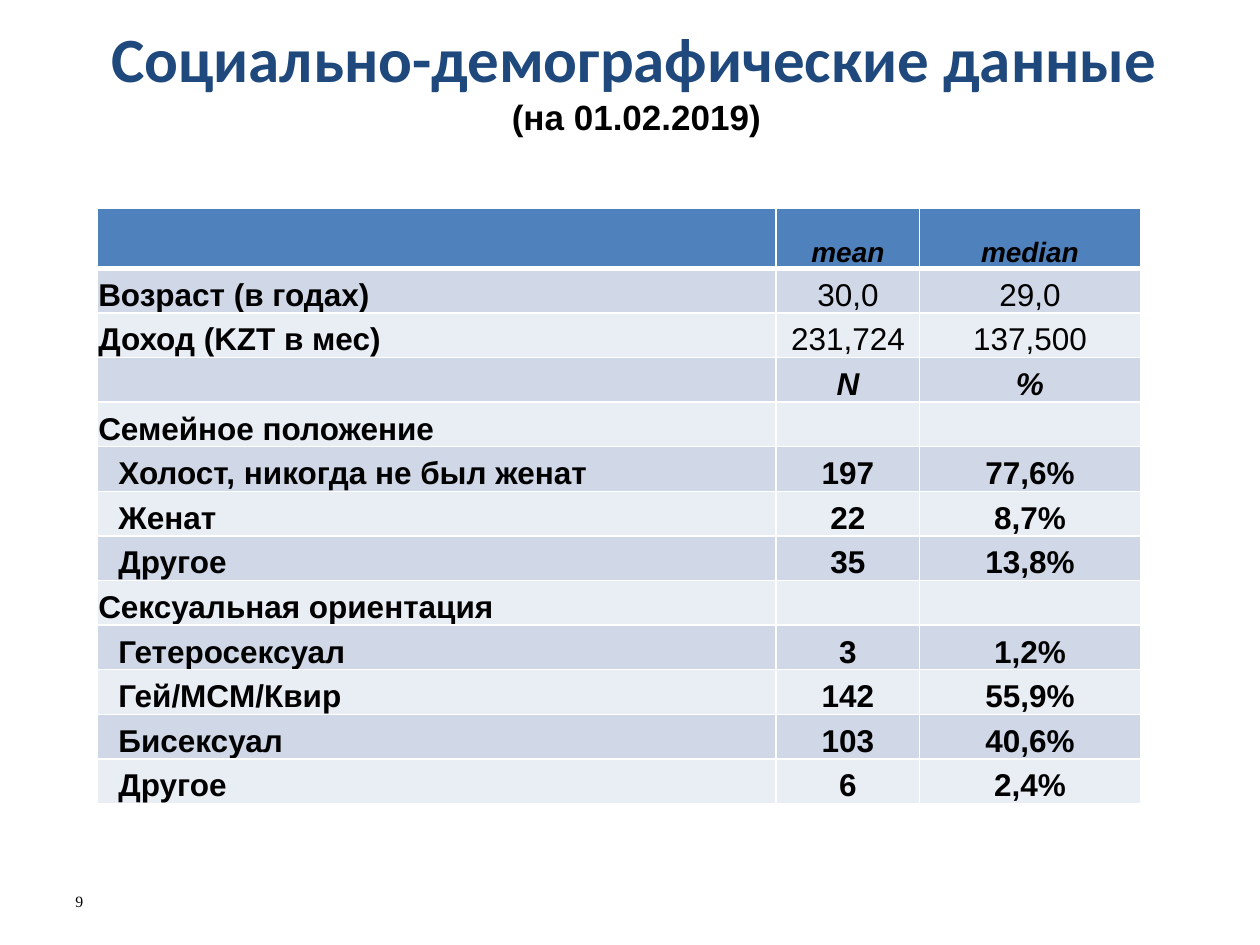
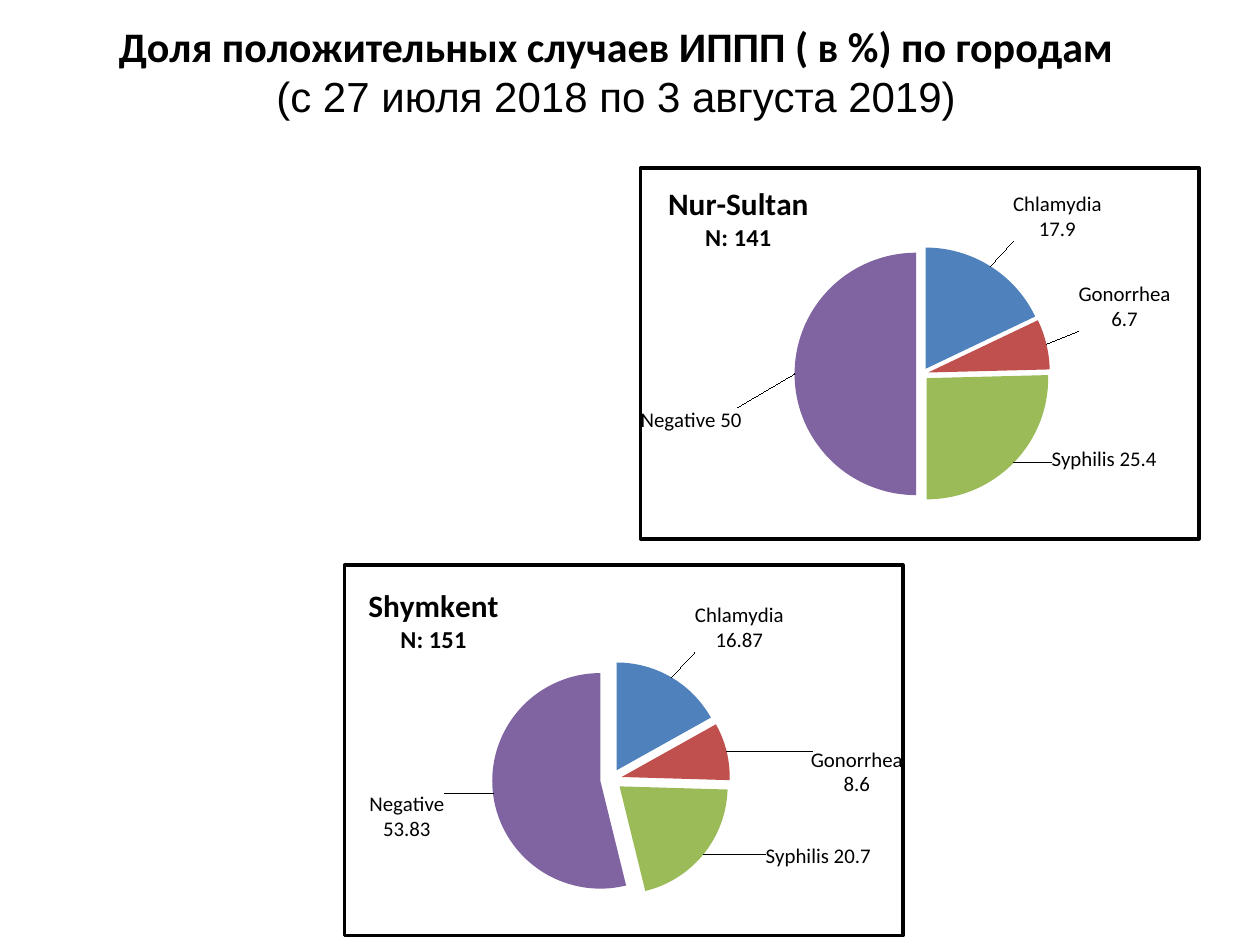
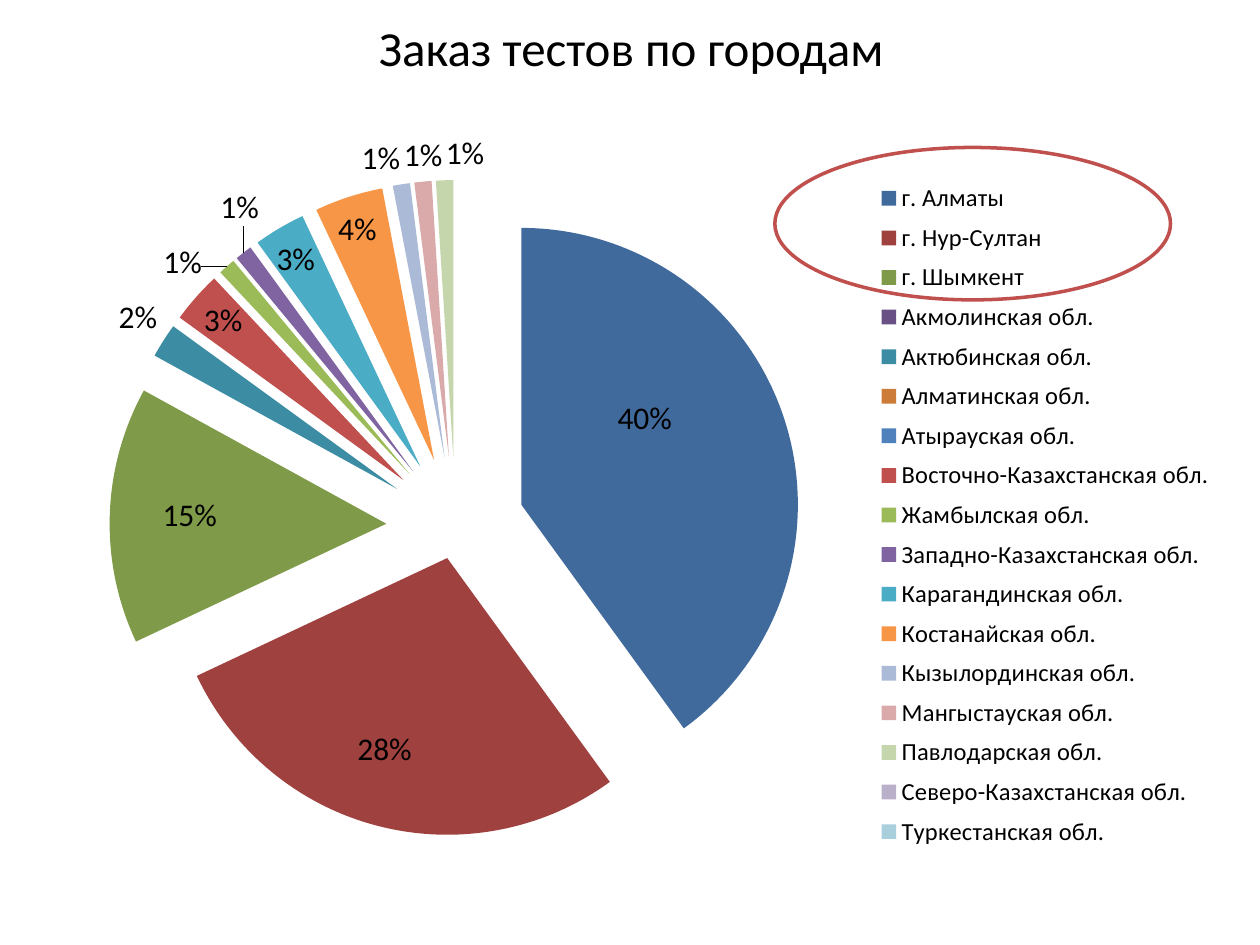
from pptx import Presentation
from pptx.chart.data import CategoryChartData
from pptx.dml.color import RGBColor
from pptx.enum import chart as ch, shapes, text
from pptx.oxml import parse_xml
from pptx.oxml.ns import nsdecls, qn
from pptx.util import Inches, Pt

# Shared look
COLORS = {"black": "000000", "white": "FFFFFF", "navy": "1F497D", "header": "4F81BD",
          "band_dark": "D0D8E8", "band_light": "E9EDF4", "red": "C0504D"}
ACCENTS = ["4F81BD", "C0504D", "9BBB59", "8064A2", "4BACC6", "F79646"]
DARK_ACCENTS = ["416A9C", "9F413E", "7F9A48", "695185", "3C8DA3", "CC7B38"]
LIGHT_ACCENTS = ["AABAD7", "D9AAA9", "C6D6AC", "BAB0C9", "A9CFDD"]
CENTER, LEFT = text.PP_ALIGN.CENTER, text.PP_ALIGN.LEFT

# Slide 1: (kind, label, first value, second value)
DEMOGRAPHY = [
    ("header", "", "mean", "median"),
    ("plain", "Возраст (в годах)", "30,0", "29,0"),
    ("plain", "Доход (KZT в мес)", "231,724", "137,500"),
    ("units", "", "N", "%"),
    ("group", "Семейное положение", "", ""),
    ("item", "Холост, никогда не был женат", "197", "77,6%"),
    ("item", "Женат", "22", "8,7%"),
    ("item", "Другое", "35", "13,8%"),
    ("group", "Сексуальная ориентация", "", ""),
    ("item", "Гетеросексуал", "3", "1,2%"),
    ("item", "Гей/MСM/Квир", "142", "55,9%"),
    ("item", "Бисексуал", "103", "40,6%"),
    ("item", "Другое", "6", "2,4%"),
]
TABLE_AT = (0.77, 1.65, 8.28, 4.73)
COLUMN_WIDTHS = [5.39, 1.14, 1.75]
HEADER_HEIGHT = 0.48

# Slide 2: places inside a chart and label shifts are in inches
INFECTIONS = ["Chlamydia", "Gonorrhea", "Syphilis", "Negative"]
CITIES = [
    {"name": "Nur-Sultan", "count": "N: 141", "at": (5.07, 1.32), "explosion": 5,
     "values": [17.9, 6.7, 25.4, 50], "plot": (1.23, 0.63, 2.04, 2.04),
     "title_at": (0.19, 0.09),
     "shifts": [(0.15, -0.15), (0.2, -0.09), (0.26, -0.17), (-0.4, 0.37)]},
    {"name": "Shymkent", "count": "N: 151", "at": (2.72, 4.47), "explosion": 10,
     "values": [16.87, 8.6, 20.7, 53.83], "plot": (1.18, 0.77, 1.9, 1.9),
     "title_at": (0.16, 0.13),
     "shifts": [(0.16, -0.15), (0.63, 0.38), (0.45, -0.12), (-0.33, -0.02)]},
]
CITY_SIZE = (4.46, 2.97)

# Slide 3: share of test orders
ORDERS = [
    ("г. Алматы", 40), ("г. Нур-Султан", 28), ("г. Шымкент", 15),
    ("Акмолинская обл.", 0), ("Актюбинская обл.", 2), ("Алматинская обл.", 0),
    ("Атырауская обл.", 0), ("Восточно-Казахстанская обл.", 3),
    ("Жамбылская обл.", 1), ("Западно-Казахстанская обл.", 1),
    ("Карагандинская обл.", 3), ("Костанайская обл.", 4), ("Кызылординская обл.", 1),
    ("Мангыстауская обл.", 1), ("Павлодарская обл.", 1),
    ("Северо-Казахстанская обл.", 0), ("Туркестанская обл.", 0),
]
ORDER_SHIFTS = [(-1.38, 0.16), (0.28, -0.82), (0.91, 0)]
UNLABELLED = ["Акмолинская обл.", "Атырауская обл.", "Северо-Казахстанская обл.",
              "Туркестанская обл."]
ORDERS_AT = (0.24, 0.9, 9.5, 6.34)


def rgb(name):
    return RGBColor.from_string(COLORS.get(name, name))


def inches(values):
    return [Inches(value) for value in values]


def add_span(para, words, size, font="Calibri", color="black", bold=False, italic=False):
    span = para.add_run()
    span.text = words
    span.font.size, span.font.name = Pt(size), font
    span.font.bold, span.font.italic = bold, italic
    span.font.color.rgb = rgb(color)


def add_text(page, at, lines, align=CENTER):
    """Each line is a dict of add_span arguments; lines share one paragraph."""
    frame = page.shapes.add_textbox(*inches(at)).text_frame
    frame.word_wrap = True
    frame.vertical_anchor = text.MSO_ANCHOR.MIDDLE
    para = frame.paragraphs[0]
    para.alignment = align
    for number, line in enumerate(lines):
        if number:
            para.add_line_break()
        add_span(para, **line)


# Table parts
def set_borders(cell, top, bottom):
    props = cell._tc.get_or_add_tcPr()
    widths = {"lnL": 1, "lnR": 1, "lnT": top, "lnB": bottom}
    for position, (side, width) in enumerate(widths.items()):
        props.insert(position, parse_xml(
            f'<a:{side} {nsdecls("a")} w="{Pt(width)}"><a:solidFill>'
            f'<a:srgbClr val="{COLORS["white"]}"/></a:solidFill></a:{side}>'))


def fill_cell(cell, words, kind, row, column):
    band = "header" if row == 0 else "band_dark" if row % 2 else "band_light"
    cell.fill.solid()
    cell.fill.fore_color.rgb = rgb(band)
    set_borders(cell, 3 if row == 1 else 1, 3 if row == 0 else 1)
    cell.vertical_anchor = text.MSO_ANCHOR.BOTTOM
    indent = 0.17 if kind == "item" and column == 0 else 0.01
    cell.margin_left, cell.margin_top = Inches(indent), Inches(0.01)
    cell.margin_right, cell.margin_bottom = Inches(0.01), 0
    para = cell.text_frame.paragraphs[0]
    para.alignment = CENTER if column else LEFT
    size = 16 if kind == "header" else 18
    if words:
        add_span(para, words, size, "Arial", bold=column == 0 or kind != "plain",
                 italic=kind in ("header", "units"))
    else:
        para.font.size = Pt(size)


# Chart parts
def layout_xml(at, chart_size, edge=True, inner=False):
    """Turn inches inside a chart into the fractions a chart layout needs."""
    modes = '<c:layoutTarget val="inner"/>' if inner else ""
    if edge:
        modes += '<c:xMode val="edge"/><c:yMode val="edge"/>'
    places = "".join(f'<c:{tag} val="{value / whole:.4f}"/>'
                     for tag, value, whole in zip("xywh", at, chart_size * 2))
    return f'<c:layout {nsdecls("c")}><c:manualLayout>{modes}{places}</c:manualLayout></c:layout>'


def set_layout(parent, after, layout):
    """Replace the layout of a chart part, right behind the child named after."""
    for old in parent.findall(qn("c:layout")):
        parent.remove(old)
    node = parse_xml(layout)
    if after is None:
        parent.insert(0, node)
    else:
        parent.find(qn(after)).addnext(node)


def labels_xml(shows, position, shifts, chart_size):
    """shifts maps a slice number to its label shift, or to None for no label."""
    flags = "".join(f'<c:show{flag} val="{int(flag in shows)}"/>' for flag in
                    ("LegendKey", "Val", "CatName", "SerName", "Percent", "BubbleSize"))
    flags = f'<c:dLblPos val="{position}"/>{flags}<c:separator> </c:separator>'
    special = ""
    for number, shift in sorted(shifts.items()):
        body = (layout_xml(shift, chart_size, edge=False) + flags if shift
                else '<c:delete val="1"/>')
        special += f'<c:dLbl><c:idx val="{number}"/>{body}</c:dLbl>'
    return (f'<c:dLbls {nsdecls("c")}>{special}{flags}'
            '<c:showLeaderLines val="1"/></c:dLbls>')


def explosion_node(percent):
    return parse_xml(f'<c:explosion {nsdecls("c")} val="{percent}"/>')


def add_pie(page, at, names, values, colors, size, explosion, plot, labels):
    data = CategoryChartData()
    data.categories = names
    data.add_series("Series 1", values)
    chart = page.shapes.add_chart(ch.XL_CHART_TYPE.PIE, *inches(at), data).chart
    chart.font.size, chart.font.name = Pt(size), "Calibri"
    chart.font.color.rgb = rgb("black")
    chart.has_title = chart.has_legend = False
    chart.plots[0].vary_by_categories = True
    series = chart.plots[0].series[0]
    for number, color in enumerate(colors):
        fill = series.points[number].format.fill
        fill.solid()
        fill.fore_color.rgb = rgb(color)
    node = series._element
    node.find(qn("c:tx")).addnext(explosion_node(explosion))
    node.find(qn("c:cat")).addprevious(parse_xml(labels))
    set_layout(chart._chartSpace.chart.plotArea, None, layout_xml(plot, at[2:], inner=True))
    return chart


def frame_chart(chart):
    chart._chartSpace.chart.addnext(parse_xml(
        f'<c:spPr {nsdecls("c", "a")}><a:solidFill><a:srgbClr val="{COLORS["white"]}"/>'
        f'</a:solidFill><a:ln w="{Pt(2)}"><a:solidFill><a:srgbClr val="{COLORS["black"]}"/>'
        '</a:solidFill></a:ln></c:spPr>'))


# Slides
def demography_slide(page):
    add_text(page, (0.59, 0, 9, 1.25), [
        {"words": "Социально-демографические данные ", "size": 36, "color": "navy", "bold": True},
        {"words": "(на 01.02.2019) ", "size": 20, "font": "Arial", "bold": True}])
    table = page.shapes.add_table(
        len(DEMOGRAPHY), len(COLUMN_WIDTHS), *inches(TABLE_AT)).table
    for column, width in enumerate(COLUMN_WIDTHS):
        table.columns[column].width = Inches(width)
    row_height = (TABLE_AT[3] - HEADER_HEIGHT) / (len(DEMOGRAPHY) - 1)
    for row, (kind, *cells) in enumerate(DEMOGRAPHY):
        table.rows[row].height = Inches(row_height if row else HEADER_HEIGHT)
        for column, words in enumerate(cells):
            fill_cell(table.cell(row, column), words, kind, row, column)
    add_text(page, (0.5, 6.95, 2.33, 0.4),
             [{"words": "9", "size": 9, "font": "Times New Roman"}], LEFT)


def infections_slide(page):
    add_text(page, (0.5, 0.07, 8.78, 0.98), [
        {"words": "Доля положительных случаев ИППП ( в %) по городам", "size": 24, "bold": True},
        {"words": "(с 27 июля 2018 по 3 августа 2019)", "size": 24, "font": "Arial"}])
    for city in CITIES:
        labels = labels_xml(("Val", "CatName"), "outEnd",
                            dict(enumerate(city["shifts"])), CITY_SIZE)
        chart = add_pie(page, city["at"] + CITY_SIZE, INFECTIONS, city["values"], ACCENTS[:4],
                        12, city["explosion"], city["plot"], labels)
        frame_chart(chart)
        title = chart.chart_title
        frame = title.text_frame
        add_span(frame.paragraphs[0], city["name"], 18, bold=True)
        add_span(frame.add_paragraph(), city["count"], 14, bold=True)
        set_layout(title._element, "c:tx", layout_xml(city["title_at"], CITY_SIZE))


def orders_slide(page):
    add_text(page, (2.01, 0.05, 6, 0.65), [{"words": "Заказ тестов по городам", "size": 28}])
    names, values = zip(*ORDERS)
    chart_size = ORDERS_AT[2:]
    shifts = dict(enumerate(ORDER_SHIFTS))
    shifts.update({names.index(name): None for name in UNLABELLED})
    chart = add_pie(page, ORDERS_AT, names, values, DARK_ACCENTS + ACCENTS + LIGHT_ACCENTS,
                    18, 25, (0.63, 0.53, 5.49, 5.49),
                    labels_xml(("Percent",), "bestFit", shifts, chart_size))
    # The second city sits closer to the centre
    second = chart.plots[0].series[0]._element.findall(qn("c:dPt"))[1]
    second.find(qn("c:spPr")).addprevious(explosion_node(12))
    chart.has_legend = True
    legend = chart.legend
    legend.position = ch.XL_LEGEND_POSITION.RIGHT
    legend.include_in_layout = False
    legend.font.size, legend.font.name = Pt(14), "Calibri"
    set_layout(legend._element, "c:legendPos",
               layout_xml((6.68, 0.48, 2.75, 5.42), chart_size))
    # Ring around the three cities
    ring = page.shapes.add_shape(shapes.MSO_SHAPE.OVAL, *inches((6.15, 1.17, 3.14, 1.21)))
    ring.shadow.inherit = False
    ring.fill.background()
    ring.line.color.rgb = rgb("red")
    ring.line.width = Pt(2)


def main():
    deck = Presentation()
    deck.slide_width, deck.slide_height = Inches(10), Inches(7.5)
    for build in (demography_slide, infections_slide, orders_slide):
        build(deck.slides.add_slide(deck.slide_layouts[6]))
    deck.save("out.pptx")


if __name__ == "__main__":
    main()
